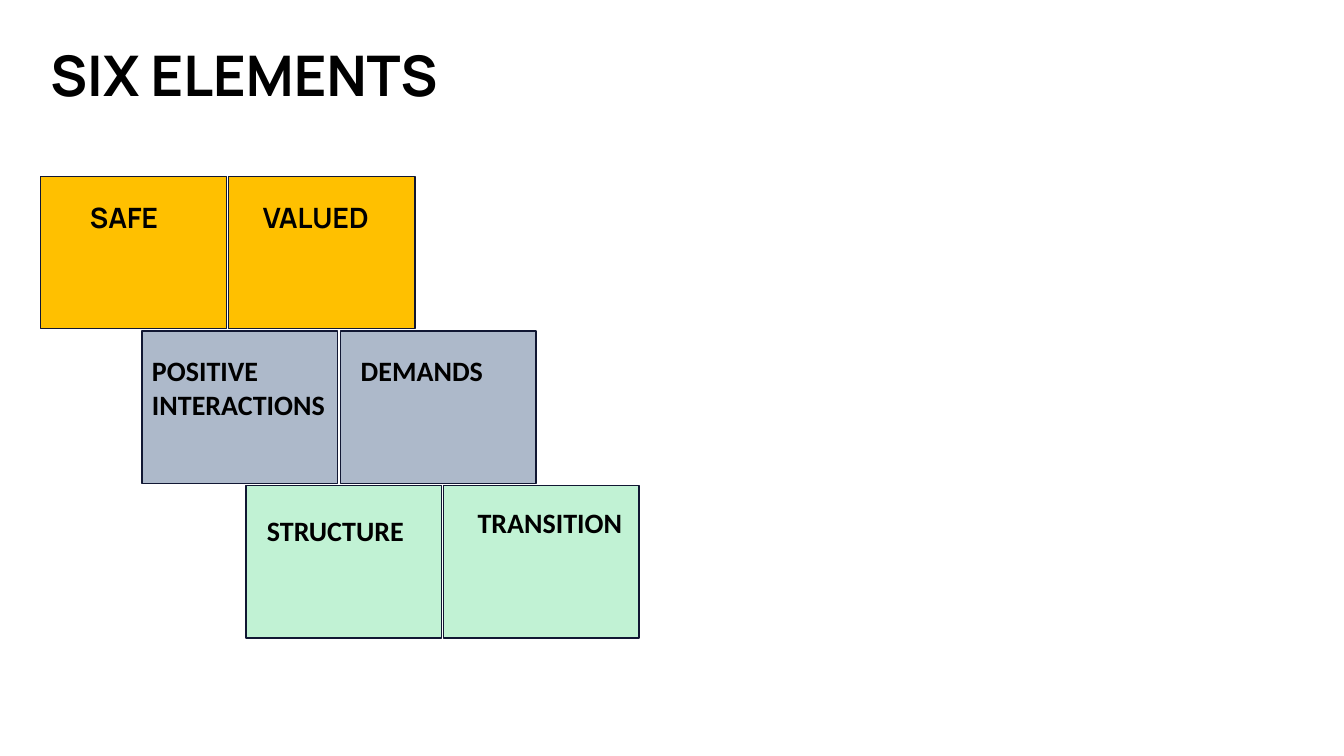
from pptx import Presentation
from pptx.dml.color import RGBColor
from pptx.enum.shapes import MSO_SHAPE
from pptx.enum.text import MSO_ANCHOR, PP_ALIGN
from pptx.util import Pt

RECT = MSO_SHAPE.RECTANGLE
MIDDLE, TOP = MSO_ANCHOR.MIDDLE, MSO_ANCHOR.TOP
LEFT = PP_ALIGN.LEFT
TITLE_ONLY = 5


class Theme:
    text = RGBColor(0x00, 0x00, 0x00)
    outline = RGBColor(0x11, 0x17, 0x33)
    gold = RGBColor(0xFF, 0xC0, 0x00)
    slate = RGBColor(0xAD, 0xB9, 0xCA)
    mint = RGBColor(0xC1, 0xF2, 0xD4)
    heading_font, body_font = "Manrope", "Calibri"
    title_size, label_size = Pt(40), Pt(20)


# Steps of two boxes, from top to bottom
STEP_TOP, STEP_PITCH, BOX_HEIGHT = 126, 110.5, 108.7
# left, box width, distance between boxes, fill, font,
# labels with their offset from the box corner
STEPS = [
    (28.8, 133.2, 134.6, Theme.gold, Theme.heading_font,
     [("SAFE", 28.3, 14), ("VALUED", 17.2, 14)]),
    (101.5, 139.7, 141.8, Theme.slate, Theme.body_font,
     [("POSITIVE INTERACTIONS", 0, 12.6), ("DEMANDS", 7.3, 12.6)]),
    (175.7, 139.7, 141.1, Theme.mint, Theme.body_font,
     [("STRUCTURE", 7.9, 15.9), ("TRANSITION", 17.3, 10.8)]),
]


def write(tf, text, anchor, **font):
    tf.word_wrap = True
    tf.vertical_anchor = anchor
    p = tf.paragraphs[0]
    p.alignment = LEFT
    r = p.add_run()
    r.text = text
    r.font.color.rgb = Theme.text
    for name, value in {"bold": True, **font}.items():
        setattr(r.font, name, value)
    return p


def add_title(s, text):
    sp = s.shapes.title
    place = {"left": 28.8, "top": 28.8, "width": 530, "height": 54.7}
    for name, value in place.items():
        setattr(sp, name, Pt(value))
    p = write(sp.text_frame, text, MIDDLE,
              name=Theme.heading_font, size=Theme.title_size)
    p.line_spacing = 0.9


def add_box(s, left, top, width, fill):
    sp = s.shapes.add_shape(RECT, Pt(left), Pt(top), Pt(width), Pt(BOX_HEIGHT))
    sp.shadow.inherit = False
    sp.fill.solid()
    sp.fill.fore_color.rgb = fill
    sp.line.color.rgb = Theme.outline
    sp.line.width = Pt(1)


def add_label(s, text, left, top, width, font):
    sp = s.shapes.add_textbox(Pt(left), Pt(top), Pt(width), Pt(32))
    write(sp.text_frame, text, TOP, name=font, size=Theme.label_size)


def main():
    prs = Presentation()
    prs.slide_width, prs.slide_height = Pt(960), Pt(540)
    s = prs.slides.add_slide(prs.slide_layouts[TITLE_ONLY])
    add_title(s, "SIX ELEMENTS")

    # Staircase of labelled boxes
    for row, (left, width, pitch, fill, font, labels) in enumerate(STEPS):
        top = STEP_TOP + row * STEP_PITCH
        for col, (text, dx, dy) in enumerate(labels):
            x = left + col * pitch
            add_box(s, x, top, width, fill)
            add_label(s, text, x + dx, top + dy, width, font)

    prs.save("out.pptx")


if __name__ == "__main__":
    main()
